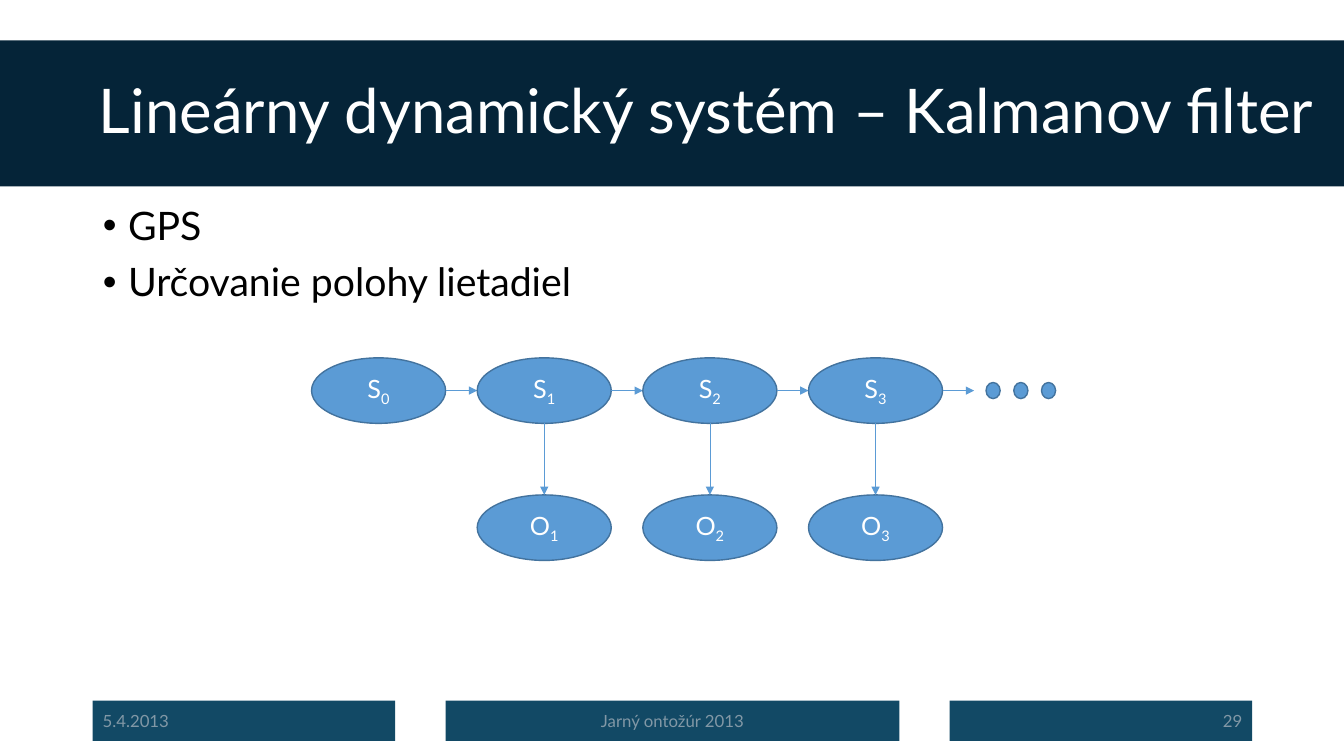
import dataclasses
import typing

import lxml.etree
import pptx
import pptx.dml.color
import pptx.enum.shapes
import pptx.enum.text
import pptx.oxml
import pptx.oxml.ns
import pptx.util

RGB = pptx.dml.color.RGBColor
KIND = pptx.enum.shapes.MSO_SHAPE
ALIGN = pptx.enum.text.PP_ALIGN
MIDDLE = pptx.enum.text.MSO_ANCHOR.MIDDLE
Inches = pptx.util.Inches
Pt = pptx.util.Pt

NAVY = RGB(0x05, 0x24, 0x38)
TEAL = RGB(0x12, 0x49, 0x65)
MIST = RGB(0x82, 0x98, 0xA6)
BLUE = RGB(0x5B, 0x9B, 0xD5)
EDGE = RGB(0x43, 0x73, 0x9E)
WHITE = RGB(0xFF, 0xFF, 0xFF)
BLACK = RGB(0, 0, 0)

WIDE, HIGH = 13.33, 7.5
LEFT, TOP = 3.09, 3.55  # first node of the grid
COL, ROW = 1.643, 1.36  # grid steps
NODE_W, NODE_H = 1.33, 0.65
DOT_W, DOT_H, DOT_STEP = 0.14, 0.16, 0.275


@dataclasses.dataclass(frozen=True)
class Box:
    left: float
    top: float
    width: float
    height: float

    def place(self, shape: typing.Any) -> None:
        for name, value in dataclasses.asdict(self).items():
            setattr(shape, name, Inches(value))


@dataclasses.dataclass(frozen=True)
class Node:
    sign: str
    col: int
    row: int

    @property
    def box(self) -> Box:
        return Box(LEFT + self.col * COL, TOP + self.row * ROW, NODE_W, NODE_H)


@dataclasses.dataclass(frozen=True)
class Label:
    text: str
    left: float
    width: float
    align: ALIGN


NODES = [Node("S", col, 0) for col in range(4)] + [Node("O", col, 1) for col in range(1, 4)]
LABELS = [
    Label("5.4.2013", 0.92, 3, ALIGN.LEFT),
    Label("Jarný ontožúr 2013", 4.42, 4.5, ALIGN.CENTER),
    Label("29", 9.42, 3, ALIGN.RIGHT),
]


def paint(shape: typing.Any, color: RGB) -> None:
    shape.fill.solid()
    shape.fill.fore_color.rgb = color


def style(font: typing.Any, size: float, color: RGB) -> None:
    for name, value in {"name": "Lato", "size": Pt(size), "bold": False}.items():
        setattr(font, name, value)
    font.color.rgb = color


def set_frame(frame: typing.Any, **more: typing.Any) -> None:
    base = {"word_wrap": True, "auto_size": pptx.enum.text.MSO_AUTO_SIZE.NONE}
    for name, value in {**base, **more}.items():
        setattr(frame, name, value)


def add_shape(slide: typing.Any, kind: KIND, box: Box, color: RGB,
              edge: typing.Optional[RGB] = None) -> typing.Any:
    shape = slide.shapes.add_shape(kind, 0, 0, 0, 0)
    box.place(shape)
    shape.shadow.inherit = False
    paint(shape, color)
    if edge is None:
        shape.line.fill.background()
    else:
        shape.line.color.rgb = edge
        shape.line.width = Pt(1)
    return shape


def add_title(slide: typing.Any) -> None:
    title = slide.shapes.title
    Box(0, 0.4, WIDE, 1.45).place(title)
    paint(title, NAVY)
    title.text = "Lineárny dynamický systém – Kalmanov filter"
    set_frame(title.text_frame, vertical_anchor=MIDDLE, margin_left=Inches(0.98))
    para = title.text_frame.paragraphs[0]
    para.alignment = ALIGN.LEFT
    para.line_spacing = 0.9
    style(para.font, 44, WHITE)


def add_list(slide: typing.Any) -> None:
    body = slide.placeholders[1]
    Box(0.92, 2, 11.5, 4.76).place(body)
    paint(body, WHITE)
    tint = body.fill._xPr.find(".//" + pptx.oxml.ns.qn("a:srgbClr"))
    lxml.etree.SubElement(tint, pptx.oxml.ns.qn("a:alpha"), val="80000")
    body.text_frame.text = "GPS\nUrčovanie polohy lietadiel"
    set_frame(body.text_frame)
    for index, para in enumerate(body.text_frame.paragraphs):
        para.line_spacing = 0.9
        para.space_before = Pt(10 if index else 0)
        props = para._p.get_or_add_pPr()
        props.set("marL", str(Inches(0.25)))
        props.set("indent", str(-Inches(0.25)))
        for tag, key, value in (("a:buFont", "typeface", "Arial"), ("a:buChar", "char", "•")):
            lxml.etree.SubElement(props, pptx.oxml.ns.qn(tag)).set(key, value)
        style(para.font, 28, BLACK)


def add_label(slide: typing.Any, label: Label) -> None:
    shape = add_shape(slide, KIND.RECTANGLE, Box(label.left, 6.95, label.width, 0.4), TEAL)
    set_frame(shape.text_frame, vertical_anchor=MIDDLE)
    para = shape.text_frame.paragraphs[0]
    para.text = label.text
    para.alignment = label.align
    style(para.font, 12, MIST)


def add_node(slide: typing.Any, node: Node) -> None:
    """Draw an ellipse whose letter has its column as subscript."""
    shape = add_shape(slide, KIND.OVAL, node.box, BLUE, EDGE)
    set_frame(shape.text_frame, vertical_anchor=MIDDLE)
    para = shape.text_frame.paragraphs[0]
    para.alignment = ALIGN.CENTER
    for text in (node.sign, str(node.col)):
        run = para.add_run()
        run.text = text
        style(run.font, 18, WHITE)
    run._r.get_or_add_rPr().set("baseline", "-25000")


def add_arrow(slide: typing.Any, x1: float, y1: float, x2: float, y2: float) -> None:
    ends = [Inches(value) for value in (x1, y1, x2, y2)]
    arrow = slide.shapes.add_connector(pptx.enum.shapes.MSO_CONNECTOR.STRAIGHT, *ends)
    arrow.line.color.rgb = BLUE
    arrow.line.width = Pt(0.5)
    line = arrow.line._get_or_add_ln()
    lxml.etree.SubElement(line, pptx.oxml.ns.qn("a:tailEnd"), type="triangle")
    lxml.etree.SubElement(arrow._element.spPr, pptx.oxml.ns.qn("a:effectLst"))


def add_graph(slide: typing.Any) -> None:
    for node in NODES:
        add_node(slide, node)
        box = node.box
        if node.row == 0:
            y = box.top + NODE_H / 2
            add_arrow(slide, box.left + NODE_W, y, box.left + COL, y)
        else:
            x = box.left + NODE_W / 2
            add_arrow(slide, x, TOP + NODE_H, x, box.top)
    for index in range(3):
        dot = Box(9.78 + index * DOT_STEP, TOP + (NODE_H - DOT_H) / 2, DOT_W, DOT_H)
        add_shape(slide, KIND.OVAL, dot, BLUE, EDGE)


def main() -> None:
    deck = pptx.Presentation()
    deck.slide_width, deck.slide_height = Inches(WIDE), Inches(HIGH)
    slide = deck.slides.add_slide(deck.slide_layouts[1])
    add_title(slide)
    add_list(slide)
    for label in LABELS:
        add_label(slide, label)
    add_graph(slide)
    deck.save("out.pptx")


if __name__ == "__main__":
    main()
